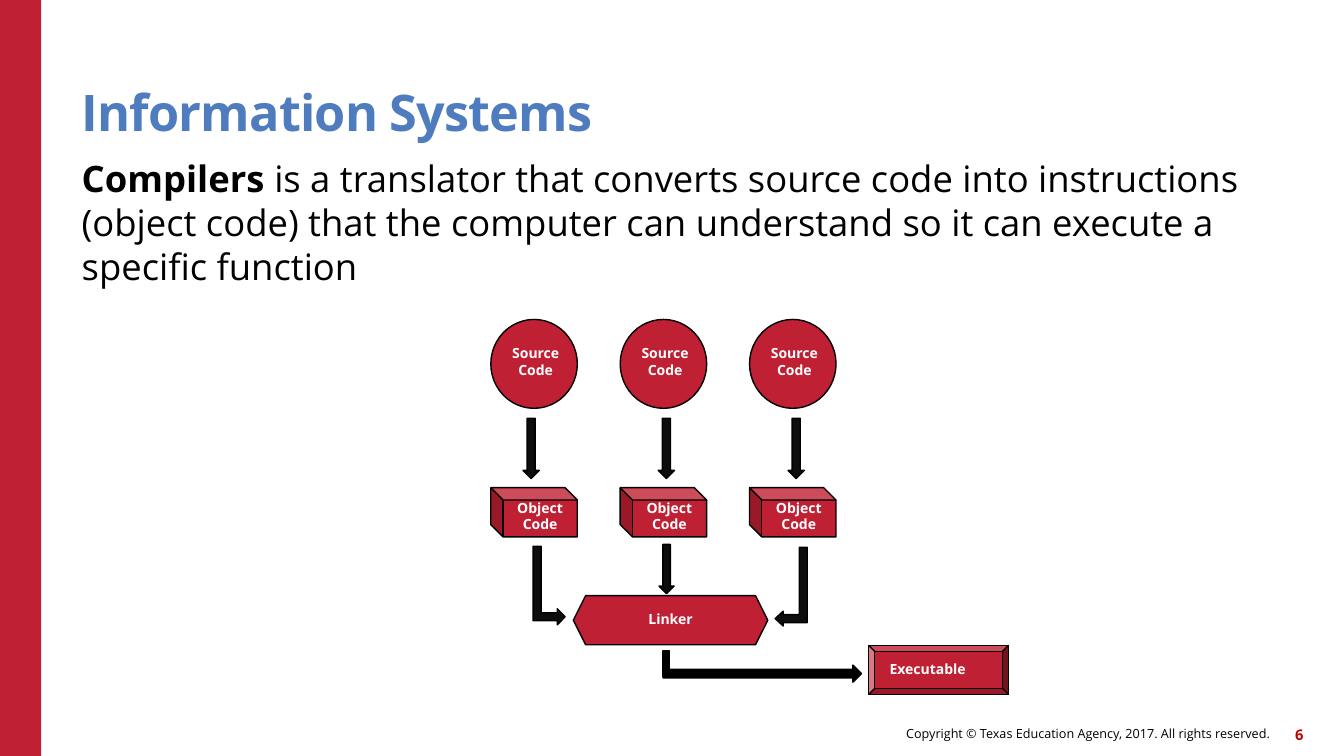
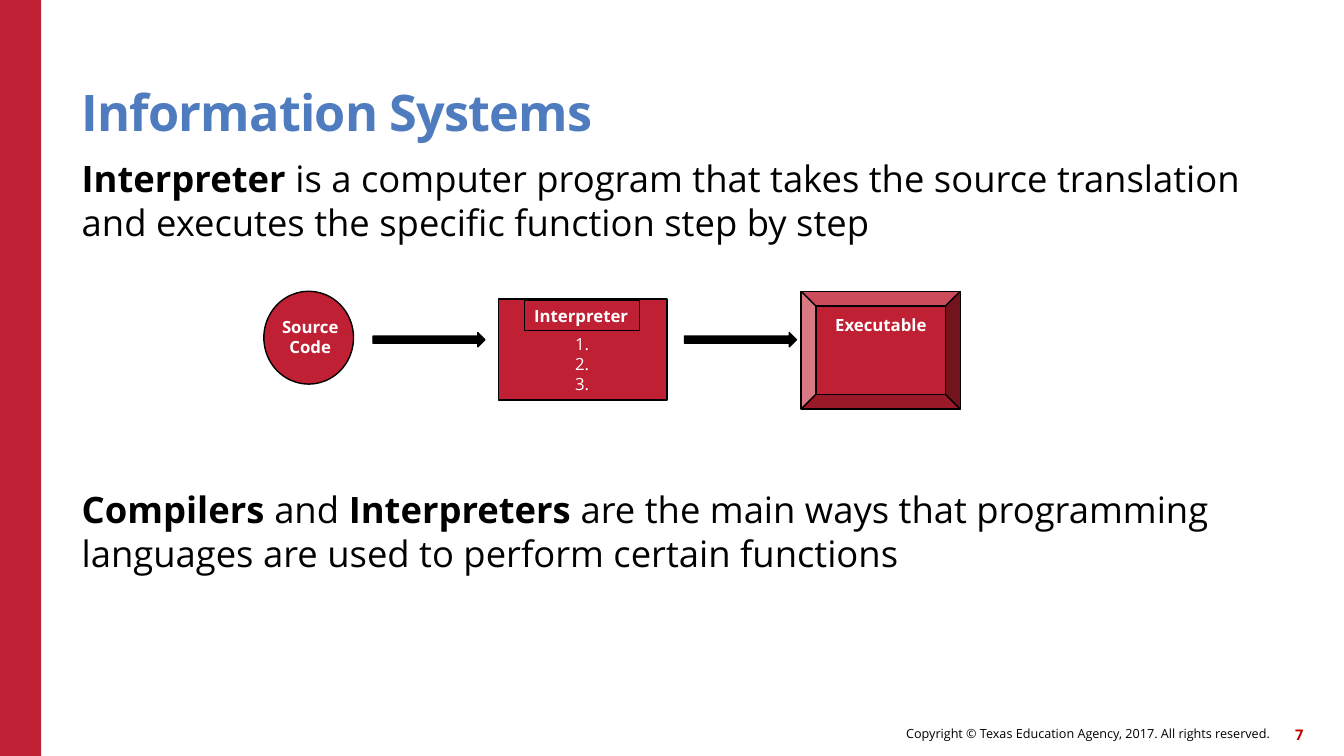
"""Build two slides that explain compilers and interpreters with flow diagrams."""
from pptx import Presentation
from pptx.dml.color import RGBColor
from pptx.enum.shapes import MSO_SHAPE
from pptx.enum.text import MSO_ANCHOR, MSO_AUTO_SIZE, PP_ALIGN
from pptx.util import Cm, Pt

LEFT, CENTER, RIGHT = PP_ALIGN.LEFT, PP_ALIGN.CENTER, PP_ALIGN.RIGHT
TOP, MIDDLE, BOTTOM = MSO_ANCHOR.TOP, MSO_ANCHOR.MIDDLE, MSO_ANCHOR.BOTTOM
CIRCLE, CUBE, BEVEL = MSO_SHAPE.OVAL, MSO_SHAPE.CUBE, MSO_SHAPE.BEVEL
RECTANGLE, HEXAGON, CORNER = MSO_SHAPE.RECTANGLE, MSO_SHAPE.HEXAGON, MSO_SHAPE.CORNER
DOWN_ARROW, RIGHT_ARROW = MSO_SHAPE.DOWN_ARROW, MSO_SHAPE.RIGHT_ARROW
BENT_ARROW = MSO_SHAPE.BENT_UP_ARROW

COLORS = {
    "red": "C02033", "number": "C00000", "title": "4E7CBE",
    "black": "000000", "ink": "0D0D0D", "white": "FFFFFF",
}
FONT = "Open Sans"
MARGINS = ("margin_left", "margin_top", "margin_right", "margin_bottom")
STYLES = {
    "title": {"size": 36, "bold": True, "color": "title", "align": LEFT, "anchor": BOTTOM},
    "body": {"size": 26, "bold": False, "color": "black", "align": LEFT, "anchor": TOP},
    "footer": {"size": 9, "bold": False, "color": "black", "align": RIGHT, "anchor": MIDDLE},
    "number": {"size": 10.5, "bold": True, "color": "number", "align": RIGHT, "anchor": MIDDLE},
    "small label": {"size": 10, "bold": True, "color": "white", "align": CENTER, "anchor": TOP},
    "small left label": {"size": 10, "bold": True, "color": "white", "align": LEFT, "anchor": TOP},
    "label": {"size": 12, "bold": True, "color": "white", "align": CENTER, "anchor": TOP},
    "left label": {"size": 12, "bold": True, "color": "white", "align": LEFT, "anchor": TOP},
    "step": {"size": 12, "bold": False, "color": "white", "align": CENTER, "anchor": TOP},
}
FLUSH_STYLES = ("title", "body", "footer", "number")
SECOND_PARAGRAPH_GAP = 174


def add_figure(page, kind, at, fill="red", line="black", rotation=0, flip=None):
    """Add a preset shape at left, top, width and height in centimetres."""
    figure = page.shapes.add_shape(kind, *map(Cm, at))
    figure.shadow.inherit = False
    figure.rotation = rotation
    figure.fill.solid()
    figure.fill.fore_color.rgb = RGBColor.from_string(COLORS[fill])
    if line:
        figure.line.color.rgb = RGBColor.from_string(COLORS[line])
        figure.line.width = Pt(1)
    else:
        figure.line.fill.background()
    if flip:
        figure._element.spPr.get_or_add_xfrm().set(flip, "1")
    return figure


def add_text(page, at, paragraphs, style_name, box=None):
    """Write paragraphs, each a list of text and bold pairs or a plain string."""
    style = STYLES[style_name]
    box = box or page.shapes.add_textbox(*map(Cm, at))
    box.left, box.top, box.width, box.height = map(Cm, at)
    frame = box.text_frame
    frame_values = {"word_wrap": True, "auto_size": MSO_AUTO_SIZE.NONE,
                    "vertical_anchor": style["anchor"]}
    if style_name in FLUSH_STYLES:
        frame_values.update(dict.fromkeys(MARGINS, 0))
    for name, value in frame_values.items():
        setattr(frame, name, value)
    for index, content in enumerate(paragraphs):
        para = frame.paragraphs[0] if index == 0 else frame.add_paragraph()
        para.alignment = style["align"]
        if index and style_name == "body":
            para.space_before = Pt(SECOND_PARAGRAPH_GAP)
        pieces = [(content, style["bold"])] if isinstance(content, str) else content
        for text, bold in pieces:
            span = para.add_run()
            span.text = text
            font_values = {"name": FONT, "size": Pt(style["size"]), "bold": bold}
            for name, value in font_values.items():
                setattr(span.font, name, value)
            span.font.color.rgb = RGBColor.from_string(COLORS[style["color"]])
    return box


deck = Presentation()
deck.slide_width, deck.slide_height = Cm(33.87), Cm(19.05)

CONTENT = [
    ("6", 3.73, [
        [("Compilers", True),
         (" is a translator that converts source code into instructions (object code) "
          "that the computer can understand so it can execute a specific function", False)],
    ]),
    ("7", 13.16, [
        [("Interpreter", True),
         (" is a computer program that takes the source translation and executes "
          "the specific function step by step", False)],
        [("Compilers", True), (" and ", False), ("Interpreters", True),
         (" are the main ways that programming languages are used to perform "
          "certain functions", False)],
    ]),
]

pages = []
for number, body_height, body in CONTENT:
    page = deck.slides.add_slide(deck.slide_layouts[5])
    add_figure(page, RECTANGLE, (0, 0, 1.04, 19.05), line=None)
    add_text(page, (15.6, 18.08, 16.4, 0.81),
             ["Copyright © Texas Education Agency, 2017. All rights reserved."], "footer")
    add_text(page, (31.78, 18.11, 1.07, 0.81), [number], "number")
    title = add_text(page, (2.06, 1.14, 27.94, 2.44), ["Information Systems"], "title",
                     page.shapes.title)
    heading = title.text_frame.paragraphs[0]
    heading.line_spacing = 0.9
    heading.runs[0]._r.get_or_add_rPr().set("spc", "-60")
    add_text(page, (2.06, 3.94, 30.71, body_height), body, "body")
    pages.append(page)
compiler_page, interpreter_page = pages

COLUMN_LEFT, COLUMN_STEP = 12.37, 3.26
for column, arrow_left in enumerate((13.18, 16.59, 19.86)):
    left = COLUMN_LEFT + column * COLUMN_STEP
    add_figure(compiler_page, CIRCLE, (left, 8.05, 2.18, 2.24))
    add_text(compiler_page, (left - 0.1, 8.56, 2.46, 1.12), ["Source Code"], "small label")
    add_figure(compiler_page, DOWN_ARROW, (arrow_left, 10.54, 0.41, 1.52), "ink")
    add_figure(compiler_page, CUBE, (left, 12.29, 2.18, 1.24), flip="flipH")
    add_text(compiler_page, (left + 0.15, 12.45, 2.18, 1.12), ["Object", "Code"], "small label")

add_figure(compiler_page, BENT_ARROW, (12.85, 14.35, 1.98, 0.81), "ink", rotation=90)
right_bend = add_figure(compiler_page, BENT_ARROW, (18.95, 14.38, 1.98, 0.81), "ink",
                        rotation=90, flip="flipV")
right_bend.adjustments[1] = 0.23
add_figure(compiler_page, DOWN_ARROW, (16.61, 13.72, 0.38, 1.24), "ink")
add_figure(compiler_page, HEXAGON, (14.45, 15.01, 4.9, 1.24))
add_text(compiler_page, (14.83, 15.27, 4.14, 0.69), ["Linker"], "small label")
add_figure(compiler_page, RIGHT_ARROW, (16.71, 16.76, 5, 0.43), "black")
add_figure(compiler_page, CORNER, (16.71, 16.41, 0.33, 0.64), "black")
add_figure(compiler_page, BEVEL, (21.89, 16.26, 3.53, 1.24))
add_text(compiler_page, (22.17, 16.51, 3.28, 0.69), ["Executable"], "small left label")

add_figure(interpreter_page, CIRCLE, (6.65, 7.34, 2.26, 2.34))
add_text(interpreter_page, (6.55, 7.85, 2.54, 1.27), ["Source Code"], "label")
add_figure(interpreter_page, RECTANGLE, (12.57, 7.54, 4.24, 2.54))
add_figure(interpreter_page, BEVEL, (20.19, 7.34, 4.01, 2.97))
add_text(interpreter_page, (20.55, 7.8, 3.3, 0.76), ["Executable"], "label")
interpreter_label = add_text(interpreter_page, (13.21, 7.57, 2.92, 0.76),
                             ["Interpreter"], "left label")
interpreter_label.line.color.rgb = RGBColor.from_string(COLORS["black"])
interpreter_label.line.width = Pt(0.75)
for arrow_left in (9.4, 17.25):
    add_figure(interpreter_page, RIGHT_ARROW, (arrow_left, 8.38, 2.82, 0.36), "black")
for index, step in enumerate(("1.", "2.", "3.")):
    add_text(interpreter_page, (12.98, 8.28 + index * 0.51, 3.38, 0.76), [step], "step")

deck.save("out.pptx")
